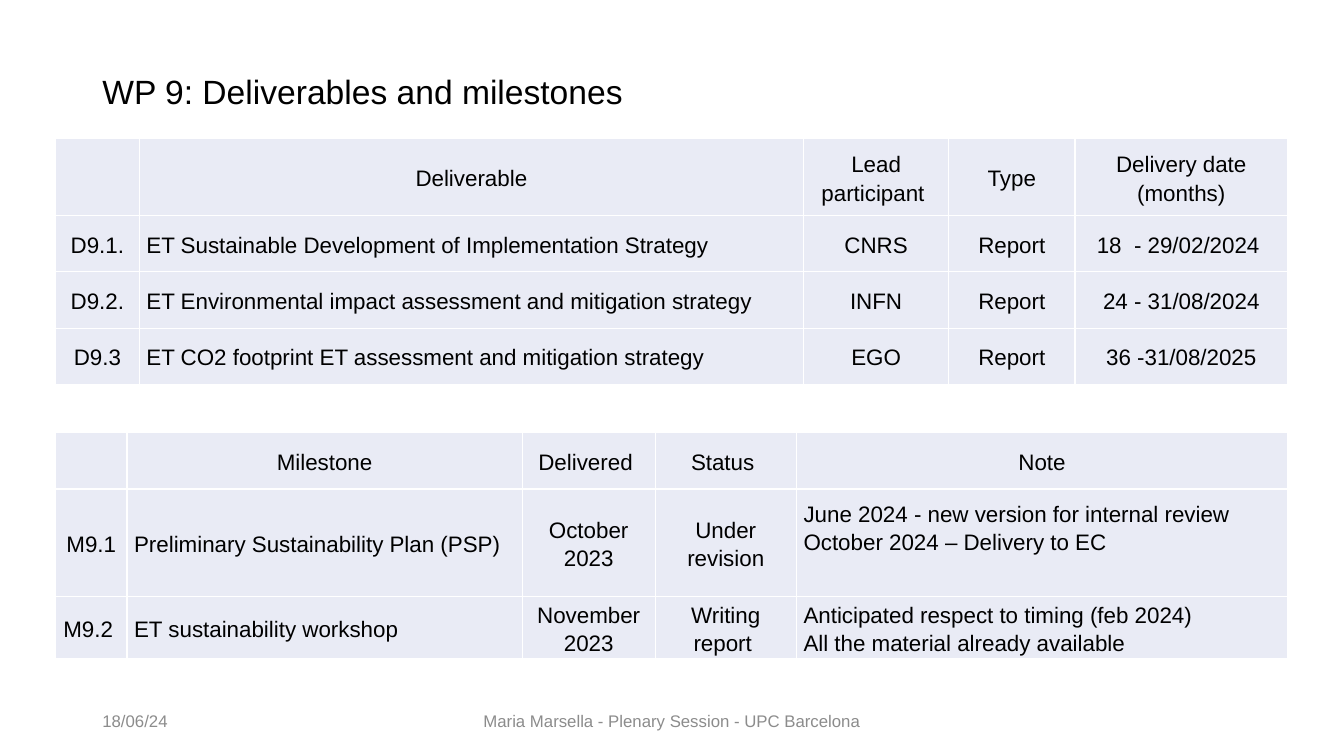
import pptx
import pptx.util
import pptx.dml.color
import pptx.enum.text
import pptx.oxml
import pptx.oxml.ns

Cm, Pt = pptx.util.Cm, pptx.util.Pt
ALIGN = pptx.enum.text.PP_ALIGN
MIDDLE = pptx.enum.text.MSO_ANCHOR.MIDDLE

FONT = "Arial"
COLORS = {"text": "000000", "footer": "8C8C8C", "cell": "E9EBF5", "border": "FFFFFF"}

DELIVERABLES = [
    ["", "Deliverable", "Lead participant ", "Type", "Delivery date\n(months)"],
    ["D9.1.", "ET Sustainable Development of Implementation Strategy",
     "CNRS", "Report", "18  - 29/02/2024 "],
    ["D9.2.", "ET Environmental impact assessment and mitigation strategy",
     "INFN", "Report", "24 - 31/08/2024"],
    ["D9.3", "ET CO2 footprint ET assessment and mitigation strategy",
     "EGO", "Report", "36 -31/08/2025"],
]
MILESTONES = [
    ["", "Milestone", "Delivered ", "Status ", "Note"],
    ["M9.1", "Preliminary Sustainability Plan (PSP)", "October 2023", "Under revision",
     "June 2024 - new version for internal review\nOctober 2024 – Delivery to EC"],
    ["M9.2 ", "ET sustainability workshop", "November 2023", "Writing report ",
     "Anticipated respect to timing (feb 2024)\nAll the material already available"],
]


def rgb(name):
    return pptx.dml.color.RGBColor.from_string(COLORS[name])


def write_text(tf, text, size, color, align, spacing):
    """Write one paragraph per line of text."""
    for i, line in enumerate(text.split("\n")):
        p = tf.paragraphs[0] if i == 0 else tf.add_paragraph()
        p.alignment = align
        p.line_spacing = spacing
        p.font.size = Pt(size)
        if line:
            r = p.add_run()
            r.text = line
            r.font.name = FONT
            r.font.size = Pt(size)
            r.font.color.rgb = rgb(color)


def add_text(s, box, text, size, color, align=ALIGN.LEFT, spacing=1.0):
    sp = s.shapes.add_textbox(*map(Cm, box))
    tf = sp.text_frame
    tf.word_wrap = True
    tf.vertical_anchor = MIDDLE
    write_text(tf, text, size, color, align, spacing)
    return sp


def set_borders(cell):
    tc_pr = cell._tc.get_or_add_tcPr()
    for side in ("lnL", "lnR", "lnT", "lnB"):
        tc_pr.append(pptx.oxml.parse_xml(
            f'<a:{side} {pptx.oxml.ns.nsdecls("a")} w="12700"><a:solidFill>'
            f'<a:srgbClr val="{COLORS["border"]}"/></a:solidFill></a:{side}>'))


def add_grid(s, left, top, widths, heights, rows, left_columns):
    """Add a table; body cells in left_columns are left-aligned."""
    frame = s.shapes.add_table(len(rows), len(widths), Cm(left), Cm(top),
                               Cm(sum(widths)), Cm(sum(heights)))
    table = frame.table
    table.first_row = table.horz_banding = False
    for column, width in zip(table.columns, widths):
        column.width = Cm(width)
    for row, height in zip(table.rows, heights):
        row.height = Cm(height)
    for i, row in enumerate(rows):
        for j, text in enumerate(row):
            cell = table.cell(i, j)
            set_borders(cell)
            cell.fill.solid()
            cell.fill.fore_color.rgb = rgb("cell")
            cell.vertical_anchor = MIDDLE
            cell.margin_left = cell.margin_right = Cm(0.18)
            cell.margin_top = cell.margin_bottom = 0
            align = ALIGN.LEFT if i and j in left_columns else ALIGN.CENTER
            write_text(cell.text_frame, text, 16, "text", align, 1.15)
    return table


def main():
    prs = pptx.Presentation()
    prs.slide_width, prs.slide_height = Cm(33.87), Cm(19.05)
    s = prs.slides.add_slide(prs.slide_layouts[6])

    # Title, raised by its bottom margin
    title = add_text(s, (2.33, 1.02, 29.21, 3.68), "WP 9: Deliverables and milestones",
                     24, "text", spacing=0.9)
    title.text_frame.margin_bottom = Cm(1.14)

    # Tables
    add_grid(s, 1.4, 3.5, [2.11, 16.74, 3.66, 3.18, 5.36], [1.93] + [1.42] * 3,
             DELIVERABLES, {1})
    milestones = add_grid(s, 1.4, 10.9, [1.8, 9.96, 3.35, 3.56, 12.38],
                          [1.42, 2.72, 1.35], MILESTONES, {1, 4})
    milestones.cell(1, 4).margin_bottom = Cm(0.8)

    # Footer
    add_text(s, (2.33, 17.65, 7.62, 1.02), "18/06/24", 12, "footer")
    add_text(s, (11.22, 17.65, 11.43, 1.02),
             "Maria Marsella - Plenary Session - UPC Barcelona", 12, "footer", ALIGN.CENTER)

    prs.save("out.pptx")


if __name__ == "__main__":
    main()
